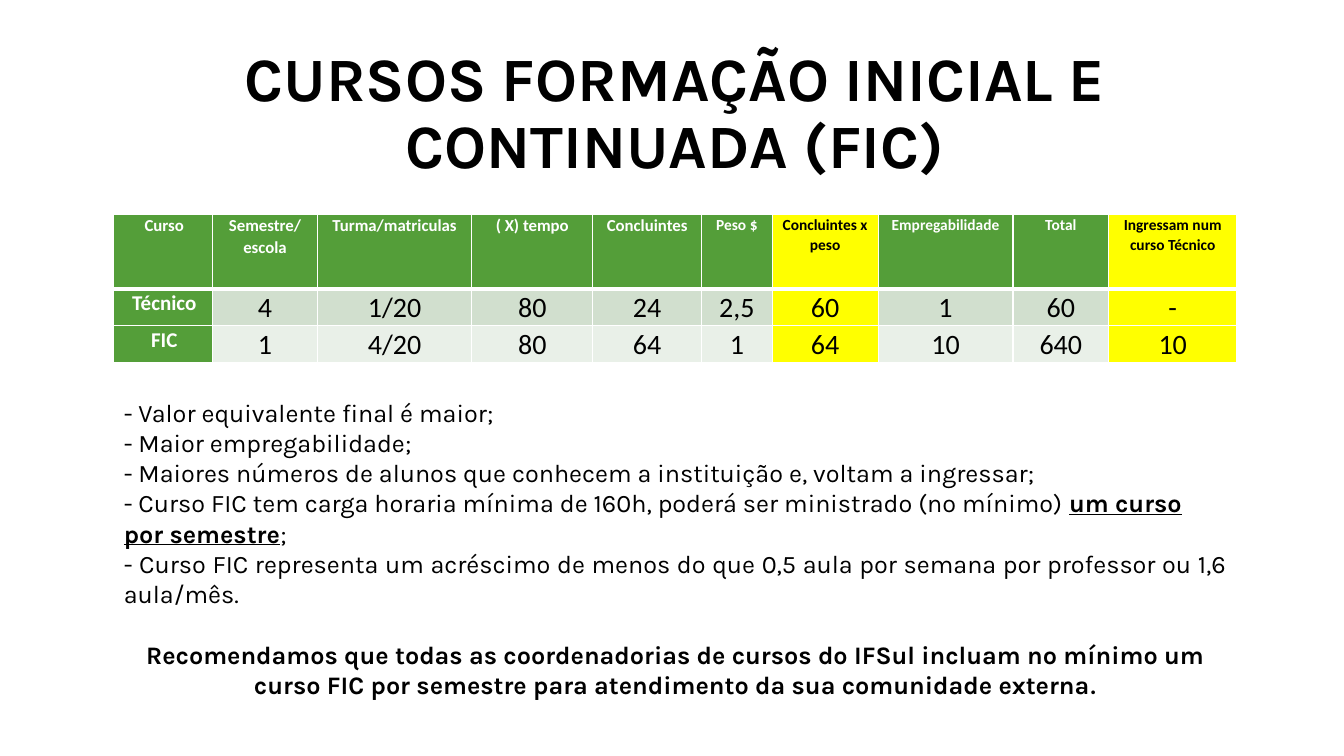
from dataclasses import dataclass

from lxml import etree
from pptx import Presentation, util as u
from pptx.dml.color import RGBColor
from pptx.enum import text
from pptx.oxml.ns import qn

TITLE = "CURSOS FORMAÇÃO INICIAL E CONTINUADA (FIC)"
COLUMNS = [
    ("Curso", 2.49), ("Semestre/ escola", 2.64), ("Turma/matriculas", 3.89),
    ("( X) tempo", 3.05), ("Concluintes", 2.74), ("Peso $", 1.78),
    ("Concluintes x peso", 2.67), ("Empregabilidade", 3.4), ("Total", 2.41),
    ("Ingressam num curso Técnico", 3.23),
]
COURSES = [
    ("Técnico", "4", "1/20", "80", "24", "2,5", "60", "1", "60", "-"),
    ("FIC", "1", "4/20", "80", "64", "1", "64", "10", "640", "10"),
]
HIGHLIGHTED = (6, 9)
FIRST_SMALL_HEADING = 5
ROW_HEIGHTS = (1.88, 0.92, 0.92)
ARGUMENTS = [
    ["- Valor equivalente final é maior;"],
    ["- Maior empregabilidade;"],
    ["- Maiores números de alunos que conhecem a instituição e, voltam a ingressar;"],
    ["- Curso FIC tem carga horaria mínima de 160h, poderá ser ministrado (no mínimo) ",
     "um curso por semestre", ";"],
    ["- Curso FIC representa um acréscimo de menos do que 0,5 aula por semana "
     "por professor ou 1,6 aula/mês."],
]
RECOMMENDATION = ["Recomendamos que todas as coordenadorias de cursos do IFSul incluam "
                  "no mínimo um curso FIC por semestre para atendimento da sua "
                  "comunidade externa", "."]
LEFT, WIDTH = 2.87, 28.3


@dataclass(frozen=True)
class Theme:
    black: str = "000000"
    white: str = "FFFFFF"
    green: str = "549E39"
    yellow: str = "FFFF00"
    bands: tuple = ("D1DFCE", "E9F0E8")
    display: str = "Karla"
    tabular: str = "Calibri"
    title: int = 44
    body: int = 18
    heading: int = 12
    small_heading: int = 11
    label: int = 15
    value: int = 20
    line: int = 1
    header_line: int = 3


THEME = Theme()


def style(run, face, size, color, bold=False):
    run.font.name = face
    run.font.size = u.Pt(size)
    run.font.color.rgb = RGBColor.from_string(color)
    run.font.bold = bold


def draw_borders(cell, row):
    widths = {"lnL": THEME.line, "lnR": THEME.line,
              "lnT": THEME.header_line if row == 1 else THEME.line,
              "lnB": THEME.header_line if row == 0 else THEME.line}
    properties = cell._tc.get_or_add_tcPr()
    for place, (side, width) in enumerate(widths.items()):
        border = etree.Element(qn(f"a:{side}"), w=str(u.Pt(width)))
        fill = etree.SubElement(border, qn("a:solidFill"))
        etree.SubElement(fill, qn("a:srgbClr"), val=THEME.white)
        properties.insert(place, border)


def cell_look(row, column):
    marked = column in HIGHLIGHTED
    if row == 0:
        size = THEME.heading if column < FIRST_SMALL_HEADING else THEME.small_heading
        if marked:
            return THEME.yellow, THEME.black, size, True
        return THEME.green, THEME.white, size, True
    if column == 0:
        return THEME.green, THEME.white, THEME.label, True
    background = THEME.yellow if marked else THEME.bands[row - 1]
    return background, THEME.black, THEME.value, False


def add_title(slide):
    title = slide.shapes.title
    title.left, title.top, title.width, title.height = map(u.Cm, (0.97, 1.3, 32.1, 3.2))
    frame = title.text_frame
    frame.text = TITLE
    frame.word_wrap = True
    frame.auto_size = text.MSO_AUTO_SIZE.NONE
    frame.vertical_anchor = text.MSO_ANCHOR.MIDDLE
    heading = frame.paragraphs[0]
    heading.alignment = text.PP_ALIGN.CENTER
    heading.line_spacing = 0.9
    style(heading.runs[0], THEME.display, THEME.title, THEME.black, True)


def add_comparison(slide):
    rows = [[name for name, _ in COLUMNS], *COURSES]
    comparison = slide.shapes.add_table(
        len(rows), len(COLUMNS), u.Cm(LEFT), u.Cm(5.4), u.Cm(WIDTH), u.Cm(sum(ROW_HEIGHTS))).table
    for column, (_, width) in zip(comparison.columns, COLUMNS):
        column.width = u.Cm(width)
    for row, height in zip(comparison.rows, ROW_HEIGHTS):
        row.height = u.Cm(height)
    for r, values in enumerate(rows):
        for c, value in enumerate(values):
            background, ink, size, bold = cell_look(r, c)
            cell = comparison.cell(r, c)
            cell.margin_left = cell.margin_right = u.Cm(0.18)
            cell.margin_top = cell.margin_bottom = 0
            cell.fill.solid()
            cell.fill.fore_color.rgb = RGBColor.from_string(background)
            draw_borders(cell, r)
            cell.text_frame.text = value
            entry = cell.text_frame.paragraphs[0]
            entry.alignment = text.PP_ALIGN.CENTER
            entry.line_spacing = 1.07
            if c == 0:
                entry._p.get_or_add_pPr().set("marL", str(u.Cm(0.05)))
            style(entry.runs[0], THEME.tabular, size, ink, bold)


def add_arguments(slide):
    frame = slide.shapes.add_textbox(*map(u.Cm, (LEFT, 9.88, WIDTH, 7.95))).text_frame
    frame.word_wrap = True
    for index, parts in enumerate([*ARGUMENTS, RECOMMENDATION]):
        paragraph = frame.paragraphs[0] if index == 0 else frame.add_paragraph()
        for position, part in enumerate(parts):
            run = paragraph.add_run()
            run.text = part
            emphasized = position == 1
            style(run, THEME.display, THEME.body, THEME.black, emphasized)
            run.font.underline = emphasized
    closing_argument, recommendation = frame.paragraphs[-2:]
    closing_argument.alignment = text.PP_ALIGN.JUSTIFY
    recommendation.alignment = text.PP_ALIGN.CENTER
    recommendation.space_before = u.Pt(21.6)
    for run in recommendation.runs:
        run.font.bold = True
        run.font.underline = False
    recommendation.runs[-1].font.name = THEME.tabular


def main():
    deck = Presentation()
    deck.slide_width, deck.slide_height = u.Cm(33.87), u.Cm(19.05)
    slide = deck.slides.add_slide(deck.slide_layouts.get_by_name("Title Only"))
    add_title(slide)
    add_comparison(slide)
    add_arguments(slide)
    deck.save("out.pptx")


if __name__ == "__main__":
    main()
